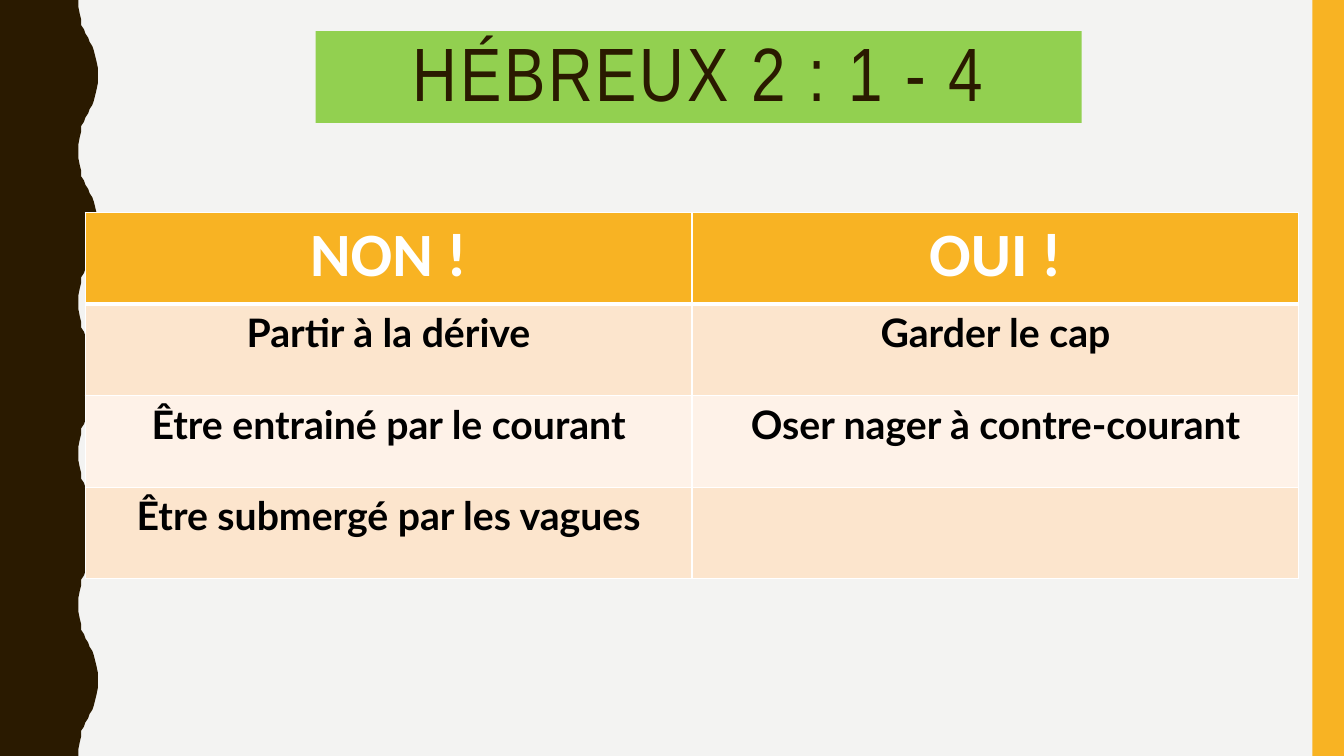
from dataclasses import dataclass

from lxml import etree
from pptx import Presentation
from pptx import util as u
from pptx.dml.color import RGBColor
from pptx.enum import shapes, text
from pptx.oxml.ns import qn


@dataclass(frozen=True)
class Theme:
    paper: str = "F3F3F2"
    dark: str = "2A1A00"
    gold: str = "F8B323"
    green: str = "92D050"
    white: str = "FFFFFF"
    black: str = "000000"
    bands: tuple = ("FCE5CD", "FEF2E8")
    title: tuple = ("Arial Narrow", 54)
    head: tuple = ("Calibri", 44)
    body: tuple = ("Lato", 28)


def tint(fill, color):
    fill.solid()
    fill.fore_color.rgb = RGBColor.from_string(color)


class Deck:
    def __init__(self, theme):
        self.theme = theme
        self.prs = Presentation()
        self.prs.slide_width, self.prs.slide_height = u.Pt(960), u.Pt(540)
        self.slide = self.prs.slides.add_slide(self.prs.slide_layouts[6])
        tint(self.slide.background.fill, theme.paper)

    def paint(self, shape, color):
        shape.shadow.inherit = False
        tint(shape.fill, color)
        shape.line.fill.background()
        return shape

    def rect(self, x, y, w, h, color):
        shape = self.slide.shapes.add_shape(
            shapes.MSO_SHAPE.RECTANGLE, u.Pt(x), u.Pt(y), u.Pt(w), u.Pt(h))
        return self.paint(shape, color)

    def label(self, frame, words, face, color, bold=False):
        frame.text = words
        para = frame.paragraphs[0]
        para.alignment = text.PP_ALIGN.CENTER
        font = para.runs[0].font
        font.name, font.size, font.bold = face[0], u.Pt(face[1]), bold
        font.color.rgb = RGBColor.from_string(color)
        return para

    def banner(self, x, y, w, h, words):
        frame = self.rect(x, y, w, h, self.theme.green).text_frame
        frame.word_wrap = True
        frame.vertical_anchor = text.MSO_ANCHOR.MIDDLE
        para = self.label(frame, words, self.theme.title, self.theme.dark)
        para.line_spacing = 0.9
        para.runs[0]._r.get_or_add_rPr().set("spc", "200")

    def wave(self, curve, pitch, count, color):
        # Each wave is the half curve followed by its mirror
        edge = []
        for top in range(0, pitch * count, pitch):
            edge += [(x, top + y) for x, y in curve]
            edge += [(x, top + pitch - y) for x, y in curve[-2::-1]]
        form = self.slide.shapes.build_freeform(0, 0, scale=float(u.Pt(1)))
        form.add_line_segments(edge + [(0, pitch * count)], close=True)
        self.paint(form.convert_to_shape(), color)

    def border(self, cell, side, width):
        props = cell._tc.get_or_add_tcPr()
        line = etree.SubElement(props, qn("a:ln" + side), w=str(u.Pt(width)))
        solid = etree.SubElement(line, qn("a:solidFill"))
        etree.SubElement(solid, qn("a:srgbClr"), val=self.theme.white)

    def table(self, x, y, w, h, rows):
        t = self.theme
        grid = self.slide.shapes.add_table(
            len(rows), len(rows[0]), u.Pt(x), u.Pt(y), u.Pt(w), u.Pt(h)).table
        for r, row in enumerate(rows):
            face, ink, back = ((t.body, t.black, t.bands[(r - 1) % 2]) if r
                               else (t.head, t.white, t.gold))
            for c, words in enumerate(row):
                cell = grid.cell(r, c)
                for side in "LRTB":
                    rule = (r, side) in ((0, "B"), (1, "T"))
                    self.border(cell, side, 3 if rule else 1)
                tint(cell.fill, back)
                if words:
                    self.label(cell.text_frame, words, face, ink, True)


def main():
    theme = Theme()
    deck = Deck(theme)

    # Wavy left edge and right strip
    curve = [(56.2, 0), (56.2, 5), (56.9, 10), (57.6, 14.4), (58.3, 18),
             (59.8, 21), (61.2, 24), (62.6, 27), (64.1, 30), (65.5, 33),
             (67, 36), (68.4, 39.6), (69.1, 44), (69.8, 49), (69.8, 54)]
    deck.wave(curve, 108, 5, theme.dark)
    deck.rect(937.5, 0, 22.5, 540, theme.gold)

    # Title
    deck.banner(225.5, 22.2, 547.2, 65.6, "HÉBREUX 2 : 1 - 4")

    # Comparison table
    deck.table(60.8, 151.8, 867, 261.6, [
        ("NON !", "OUI !"),
        ("Partir à la dérive", "Garder le cap"),
        ("Être entrainé par le courant", "Oser nager à contre-courant"),
        ("Être submergé par les vagues", ""),
    ])

    deck.prs.save("out.pptx")


if __name__ == "__main__":
    main()
